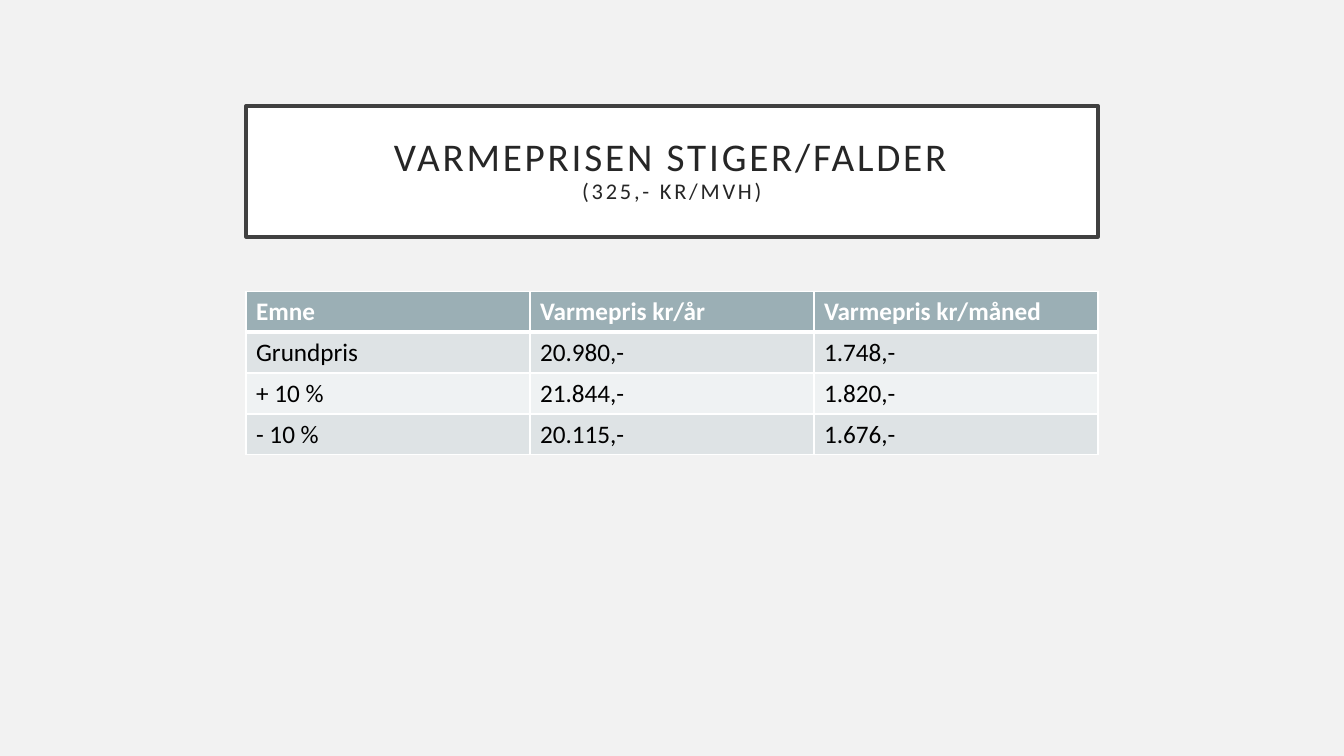
from copy import deepcopy
from dataclasses import dataclass

from lxml.etree import SubElement
from pptx import Presentation
from pptx.dml.color import RGBColor
from pptx.enum.text import MSO_ANCHOR, MSO_AUTO_SIZE, PP_ALIGN
from pptx.oxml.ns import qn
from pptx.util import Inches, Pt


@dataclass(frozen=True)
class Theme:
    font: str = "Calibri"
    background: str = "F2F2F2"
    white: str = "FFFFFF"
    frame: str = "404040"
    title: str = "262626"
    body: str = "000000"
    header: str = "9BAFB5"
    bands: tuple = ("DEE3E5", "EFF2F3")
    title_size: int = 28
    subtitle_size: int = 16
    table_size: int = 18


@dataclass(frozen=True)
class Box:
    left: float
    top: float
    width: float
    height: float

    def lengths(self):
        return [Inches(n) for n in (self.left, self.top, self.width, self.height)]


THEME = Theme()
TITLE_BOX = Box(2.44, 1.05, 8.45, 1.3)
TABLE_BOX = Box(2.44, 2.89, 8.45, 1.62)
PRICES = [
    ("Emne", "Varmepris kr/år", "Varmepris kr/måned"),
    ("Grundpris", "20.980,-", "1.748,-"),
    ("+ 10 %", "21.844,-", "1.820,-"),
    ("- 10 %", "20.115,-", "1.676,-"),
]


def paint(fill, color):
    fill.solid()
    fill.fore_color.rgb = RGBColor.from_string(color)


def add_text(para, text, size, color, bold=False, spacing=0):
    span = para.add_run()
    span.text = text
    span.font.name = THEME.font
    span.font.size = Pt(size)
    span.font.bold = bold
    span.font.color.rgb = RGBColor.from_string(color)
    if spacing:
        span.font._element.set("spc", str(spacing * 100))
    return span


def set_borders(cell, top, bottom):
    properties = cell._tc.get_or_add_tcPr()
    for side, width in (("L", 1), ("R", 1), ("T", top), ("B", bottom)):
        line = SubElement(properties, qn(f"a:ln{side}"), w=str(Pt(width)))
        fill = SubElement(line, qn("a:solidFill"))
        SubElement(fill, qn("a:srgbClr"), val=THEME.white)


def add_title(page, box):
    title = page.shapes.title
    title.left, title.top, title.width, title.height = box.lengths()
    paint(title.fill, THEME.white)
    title.line.color.rgb = RGBColor.from_string(THEME.frame)
    title.line.width = Pt(2.5)
    frame = title.text_frame
    frame.word_wrap = True
    frame.auto_size = MSO_AUTO_SIZE.NONE
    frame.vertical_anchor = MSO_ANCHOR.MIDDLE
    frame.margin_left = frame.margin_right = Inches(0.2)
    frame.margin_top = frame.margin_bottom = Inches(0.2)
    para = frame.paragraphs[0]
    para.alignment = PP_ALIGN.CENTER
    para.line_spacing = 0.9
    heading = add_text(para, "VARMEPRISEN STIGER/FALDER", THEME.title_size,
                       THEME.title, spacing=2)
    para.add_line_break()
    for line_break in title.element.iter(qn("a:br")):
        line_break.append(deepcopy(heading.font._element))
    add_text(para, "(325,- KR/MVH)", THEME.subtitle_size, THEME.title, spacing=2)


def add_price_table(page, box):
    rows, columns = len(PRICES), len(PRICES[0])
    table = page.shapes.add_table(rows, columns, *box.lengths()).table
    for column in table.columns:
        column.width = Inches(box.width / columns)
    for index, (row, values) in enumerate(zip(table.rows, PRICES)):
        row.height = Inches(box.height / rows)
        header = index == 0
        background = THEME.header if header else THEME.bands[(index - 1) % 2]
        for cell, value in zip(row.cells, values):
            set_borders(cell, top=3 if index == 1 else 1, bottom=3 if header else 1)
            paint(cell.fill, background)
            add_text(cell.text_frame.paragraphs[0], value, THEME.table_size,
                     THEME.white if header else THEME.body, bold=header)


def main():
    deck = Presentation()
    deck.slide_width, deck.slide_height = Inches(13.33), Inches(7.5)
    page = deck.slides.add_slide(deck.slide_layouts.get_by_name("Title Only"))
    paint(page.background.fill, THEME.background)
    add_title(page, TITLE_BOX)
    add_price_table(page, TABLE_BOX)
    deck.save("out.pptx")


if __name__ == "__main__":
    main()
